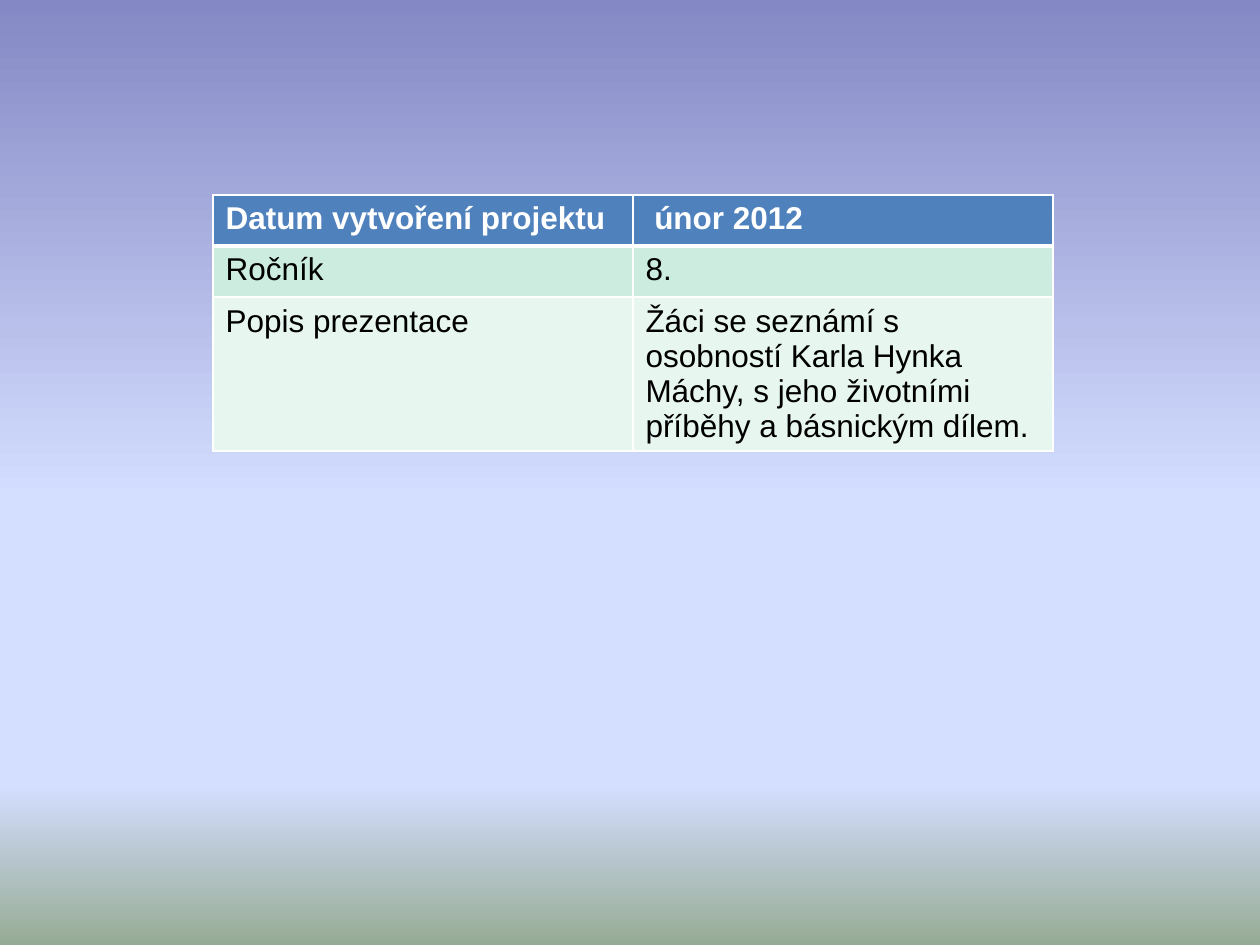
from copy import deepcopy

from lxml.etree import SubElement
from pptx import Presentation
from pptx.dml.color import RGBColor as RGB
from pptx.oxml.ns import qn
from pptx.util import Pt

COLORS = {
    "sky_top": "8488C4", "sky": "D4DEFF", "ground": "96AB94",
    "header": "4F81BD", "band": "CBECDE", "pale": "E7F6EF",
    "white": "FFFFFF", "black": "000000",
}
SKY_STOPS = [(0, "sky_top"), (0.53, "sky"), (0.83, "sky"), (1, "ground")]

ROWS = [
    ("Datum vytvoření projektu", " únor 2012"),
    ("Ročník", "8."),
    ("Popis prezentace",
     "Žáci se seznámí s osobností Karla Hynka Máchy, "
     "s jeho životními příběhy a básnickým dílem."),
]
ROW_FORMATS = [
    {"height": 29.2, "fill": "header", "text": "white", "bold": True, "top": 1, "bottom": 3},
    {"height": 29.2, "fill": "band", "text": "black", "bold": False, "top": 3, "bottom": 1},
    {"height": 88, "fill": "pale", "text": "black", "bold": False, "top": 1, "bottom": 1},
]
COLUMN_WIDTH = 240


def add_border(cell, side, width):
    """Draw a white line on one side (L, R, T or B) of the cell."""
    line = SubElement(cell._tc.get_or_add_tcPr(), qn(f"a:ln{side}"), w=str(Pt(width)))
    fill = SubElement(line, qn("a:solidFill"))
    SubElement(fill, qn("a:srgbClr"), val=COLORS["white"])


prs = Presentation()
prs.slide_width, prs.slide_height = Pt(720), Pt(540)
slide = prs.slides.add_slide(prs.slide_layouts[6])

# Background: sky fading down to the ground
sky = slide.background.fill
sky.gradient()
sky.gradient_angle = 270
stop_list = next(slide._element.iter(qn("a:gsLst")))
for extra in [deepcopy(stop) for stop in stop_list]:
    stop_list.append(extra)
for stop, (position, color) in zip(sky.gradient_stops, SKY_STOPS):
    stop.position = position
    stop.color.rgb = RGB.from_string(COLORS[color])

# Project table
project = slide.shapes.add_table(
    len(ROWS), 2, Pt(121.7), Pt(111.4), Pt(2 * COLUMN_WIDTH),
    Pt(sum(look["height"] for look in ROW_FORMATS))).table
for column in project.columns:
    column.width = Pt(COLUMN_WIDTH)

for row, texts, look in zip(project.rows, ROWS, ROW_FORMATS):
    row.height = Pt(look["height"])
    for cell, text in zip(row.cells, texts):
        for side, width in (("L", 1), ("R", 1), ("T", look["top"]), ("B", look["bottom"])):
            add_border(cell, side, width)
        cell.fill.solid()
        cell.fill.fore_color.rgb = RGB.from_string(COLORS[look["fill"]])
        run = cell.text_frame.paragraphs[0].add_run()
        run.text = text
        for name, value in {"name": "Arial", "size": Pt(18), "bold": look["bold"]}.items():
            setattr(run.font, name, value)
        run.font.color.rgb = RGB.from_string(COLORS[look["text"]])

prs.save("out.pptx")
